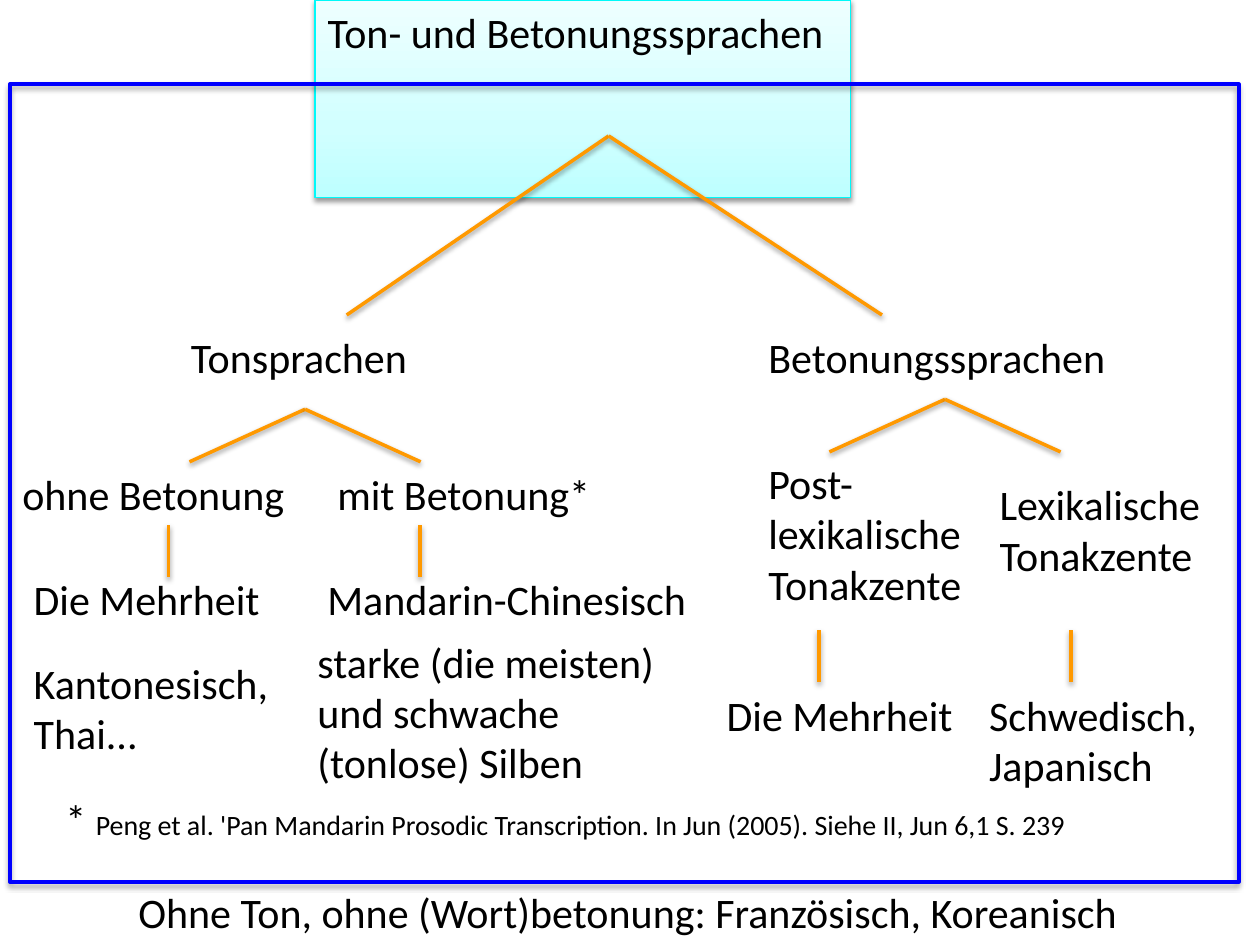
from copy import deepcopy

from lxml import etree
from pptx import Presentation
from pptx.dml.color import RGBColor
from pptx.enum.shapes import MSO_CONNECTOR, MSO_SHAPE
from pptx.enum.text import MSO_ANCHOR, MSO_AUTO_SIZE, PP_ALIGN
from pptx.oxml.ns import qn
from pptx.util import Cm, Pt

STRAIGHT = MSO_CONNECTOR.STRAIGHT
RECTANGLE = MSO_SHAPE.RECTANGLE
TOP = MSO_ANCHOR.TOP
LEFT = PP_ALIGN.LEFT
GROW = MSO_AUTO_SIZE.SHAPE_TO_FIT_TEXT

FONT = "Calibri"
BLACK, ORANGE, BLUE, CYAN = "000000", "FF9900", "0000FF", "00F9F9"
TITLE_STOPS = [(0, "BDFFFF"), (0.35, "D1FFFF"), (1, "EEFFFF")]
LINE_HEIGHT = 1.02
ARM, DROP, STEM = 2.33, 1.06, 1.05


def rgb(value):
    return RGBColor.from_string(value)


def add_shadow(sp, distance=1.6, opacity=38):
    effects = etree.SubElement(sp._element.spPr, qn("a:effectLst"))
    shadow = etree.SubElement(effects, qn("a:outerShdw"), blurRad=str(Pt(3.1)),
                              dist=str(Pt(distance)), dir="5400000", rotWithShape="0")
    color = etree.SubElement(shadow, qn("a:srgbClr"), val=BLACK)
    etree.SubElement(color, qn("a:alpha"), val=str(opacity * 1000))


def set_outline(sp, color, width):
    sp.line.color.rgb = rgb(color)
    sp.line.width = Pt(width)


def write(tf, *parts, size=24, color=BLACK):
    """Fill one left-aligned paragraph; a part is a text or a (text, size) pair."""
    tf.word_wrap = True
    tf.auto_size = GROW
    tf.vertical_anchor = TOP
    p = tf.paragraphs[0]
    p.alignment = LEFT
    for part in parts:
        text, points = part if isinstance(part, tuple) else (part, size)
        r = p.add_run()
        r.text = text
        r.font.name = FONT
        r.font.size = Pt(points)
        r.font.color.rgb = rgb(color)


def add_label(slide, x, y, w, *parts, lines=1):
    height = 0.28 + lines * LINE_HEIGHT
    sp = slide.shapes.add_textbox(Cm(x), Cm(y), Cm(w), Cm(height))
    write(sp.text_frame, *parts)


def add_line(slide, x1, y1, x2, y2):
    sp = slide.shapes.add_connector(STRAIGHT, Cm(x1), Cm(y1), Cm(x2), Cm(y2))
    set_outline(sp, ORANGE, 2)
    add_shadow(sp)


def add_fork(slide, x, y, left_arm=ARM, right_arm=ARM, drop=DROP):
    for end in (x - left_arm, x + right_arm):
        add_line(slide, x, y, end, y + drop)


def add_title(slide, x, y, w, h):
    sp = slide.shapes.title
    sp.left, sp.top, sp.width, sp.height = Cm(x), Cm(y), Cm(w), Cm(h)
    write(sp.text_frame, "Ton- und Betonungssprachen")
    sp.fill.gradient()
    sp.fill.gradient_angle = 90
    stop_list = sp._element.spPr.find(".//" + qn("a:gsLst"))
    stop_list.append(deepcopy(stop_list[-1]))
    for stop, (position, color) in zip(sp.fill.gradient_stops, TITLE_STOPS):
        stop.position = position
        stop.color.rgb = rgb(color)
    set_outline(sp, CYAN, 0.75)
    add_shadow(sp)


def add_frame(slide, x, y, w, h):
    sp = slide.shapes.add_shape(RECTANGLE, Cm(x), Cm(y), Cm(w), Cm(h))
    sp.shadow.inherit = False
    sp._element.spPr.remove(sp._element.spPr.find(qn("a:effectLst")))
    sp.fill.background()
    set_outline(sp, BLUE, 2.25)
    add_shadow(sp, distance=1.8, opacity=35)


def add_branch(slide, x, y, apex, stems, stem_top, labels):
    """Draw a language family; all offsets count from the corner x, y."""
    add_fork(slide, x + apex[0], y + apex[1])
    for stem in stems:
        add_line(slide, x + stem, y + stem_top, x + stem, y + stem_top + STEM)
    for dx, dy, w, lines, text in labels:
        add_label(slide, x + dx, y + dy, w, text, lines=lines)


# Labels: left offset, top offset, width, lines, text
TONE_LABELS = [
    (3.4, 0, 5.3, 1, "Tonsprachen"),
    (0, 2.77, 6.35, 1, "ohne Betonung"),
    (0.23, 4.88, 5.3, 1, "Die Mehrheit"),
    (0.23, 6.58, 5.5, 2, "Kantonesisch, Thai..."),
    (6.35, 2.77, 6.35, 1, "mit Betonung*"),
    (6.15, 4.88, 7.83, 1, "Mandarin-Chinesisch"),
    (5.95, 6.15, 8.05, 3, "starke (die meisten) und schwache (tonlose) Silben"),
]
STRESS_LABELS = [
    (0.84, 0, 8.05, 1, "Betonungssprachen"),
    (0.84, 2.55, 5.3, 3, "Post-lexikalische Tonakzente"),
    (0, 7.22, 5.5, 1, "Die Mehrheit"),
    (5.5, 2.98, 4.9, 2, "Lexikalische Tonakzente"),
    (5.29, 7.22, 5.08, 2, "Schwedisch, Japanisch"),
]


def main():
    prs = Presentation()
    prs.slide_width, prs.slide_height = Cm(25.4), Cm(19.05)
    slide = prs.slides.add_slide(prs.slide_layouts.get_by_name("Title Only"))

    add_title(slide, 6.35, 0, 10.8, 1.27)
    add_frame(slide, 0.2, 1.7, 24.77, 16.08)
    add_fork(slide, 12.27, 2.74, left_arm=5.28, right_arm=5.51, drop=3.61)
    add_branch(slide, 0.2, 6.55, apex=(5.95, 1.7), stems=(3.2, 8.27),
               stem_top=4.04, labels=TONE_LABELS)
    add_branch(slide, 14.4, 6.55, apex=(4.65, 1.5), stems=(2.11, 7.19),
               stem_top=6.15, labels=STRESS_LABELS)
    add_label(slide, 1.07, 15.88, 22.66, "* ",
              ("Peng et al. 'Pan Mandarin Prosodic Transcription. "
               "In Jun (2005). Siehe II, Jun 6,1 S. 239", 16))
    add_label(slide, 2.54, 17.75, 20.95,
              "Ohne Ton, ohne (Wort)betonung: Französisch, Koreanisch")
    prs.save("out.pptx")


if __name__ == "__main__":
    main()
